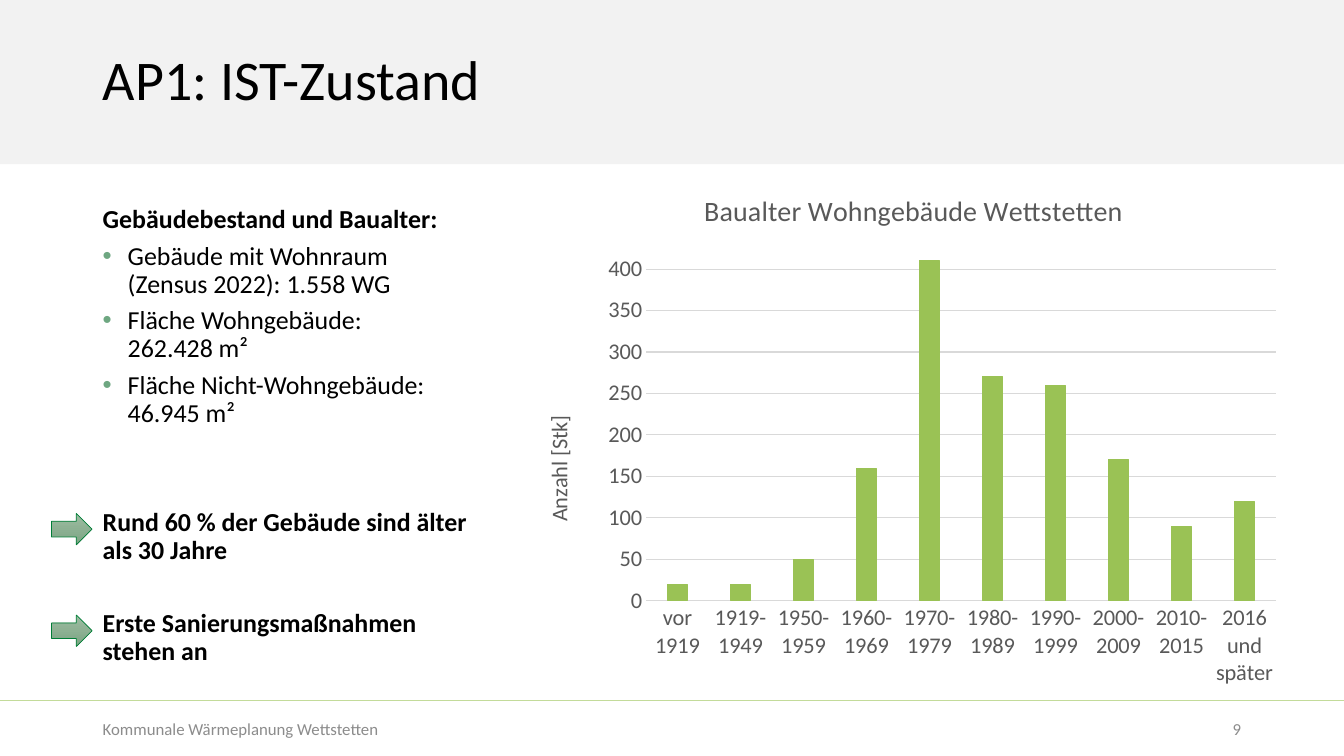
from pptx import Presentation
from pptx.chart.data import CategoryChartData
from pptx.dml.color import RGBColor
from pptx.enum.chart import XL_CHART_TYPE, XL_TICK_MARK
from pptx.enum.shapes import MSO_CONNECTOR, MSO_SHAPE
from pptx.enum.text import MSO_ANCHOR, PP_ALIGN
from pptx.oxml import parse_xml
from pptx.oxml.ns import nsdecls, qn
from pptx.util import Cm, Pt

COLUMNS = XL_CHART_TYPE.COLUMN_CLUSTERED
NO_TICK = XL_TICK_MARK.NONE
STRAIGHT = MSO_CONNECTOR.STRAIGHT
RECTANGLE, RIGHT_ARROW = MSO_SHAPE.RECTANGLE, MSO_SHAPE.RIGHT_ARROW
TOP, MIDDLE = MSO_ANCHOR.TOP, MSO_ANCHOR.MIDDLE
LEFT, RIGHT = PP_ALIGN.LEFT, PP_ALIGN.RIGHT

FONT = "Calibri"
COLORS = {
    "text": "000000", "band": "F2F2F2", "rule": "C3DB9A", "footer": "8C8C8C",
    "bullet": "6EA781", "arrow_light": "9DBCA2", "arrow_dark": "7CA583",
    "arrow_edge": "007E37", "column": "9AC255", "grid": "D9D9D9", "axis": "595959",
}
WIDTH, HEIGHT = 33.87, 19.05
MARGIN = 2.34

FACTS = [
    ("Gebäude mit Wohnraum", "(Zensus 2022): 1.558 WG"),
    ("Fläche Wohngebäude:", "262.428 m²"),
    ("Fläche Nicht-Wohngebäude:", "46.945 m²"),
]
CONCLUSIONS = [
    "Rund 60 % der Gebäude sind älter als 30 Jahre",
    "Erste Sanierungsmaßnahmen stehen an",
]
BUILDINGS = {
    "vor 1919": 20, "1919-1949": 20, "1950-1959": 50, "1960-1969": 160,
    "1970-1979": 410, "1980-1989": 270, "1990-1999": 260, "2000-2009": 170,
    "2010-2015": 90, "2016 und später": 120,
}


def color(name):
    """Return the named colour."""
    return RGBColor.from_string(COLORS[name])


def style(font, size, name="text", bold=False):
    """Give a font its face, size, colour and weight."""
    font.name, font.size, font.bold = FONT, Pt(size), bold
    font.color.rgb = color(name)


def add_run(paragraph, text, size, name="text", bold=False):
    """Append one styled run."""
    run = paragraph.add_run()
    run.text = text
    style(run.font, size, name, bold)


def add_frame(slide, left, top, width, height, anchor=TOP):
    """Add a wrapping text box and return its frame."""
    frame = slide.shapes.add_textbox(Cm(left), Cm(top), Cm(width), Cm(height)).text_frame
    frame.word_wrap = True
    frame.vertical_anchor = anchor
    return frame


def set_body_spacing(paragraph):
    """Apply the spacing of the body text."""
    paragraph.line_spacing = 0.9
    paragraph.space_after = Pt(6)


def add_bullet(paragraph):
    """Give a paragraph a green bullet and a hanging indent."""
    properties = paragraph._p.get_or_add_pPr()
    properties.set("marL", str(Cm(0.63)))
    properties.set("indent", str(-Cm(0.63)))
    for xml in (
        f'<a:buClr {nsdecls("a")}><a:srgbClr val="{COLORS["bullet"]}"/></a:buClr>',
        f'<a:buFont {nsdecls("a")} typeface="Arial"/>',
        f'<a:buChar {nsdecls("a")} char="•"/>',
    ):
        properties.append(parse_xml(xml))


def add_header(slide, width, height):
    """Place the grey band and the slide title on it."""
    band = slide.shapes.add_shape(RECTANGLE, 0, 0, Cm(width), Cm(height))
    band.shadow.inherit = False
    band.fill.solid()
    band.fill.fore_color.rgb = color("band")
    band.line.fill.background()
    slide.shapes._spTree.insert(2, band._element)

    title = slide.shapes.title
    title.left, title.top = Cm(MARGIN), Cm(0.23)
    title.width, title.height = Cm(width - 2 * MARGIN), Cm(height - 0.46)
    title.text_frame.vertical_anchor = MIDDLE
    heading = title.text_frame.paragraphs[0]
    heading.alignment = LEFT
    heading.line_spacing = 0.9
    add_run(heading, "AP1: IST-Zustand", 40)


def add_facts(slide, left, top, width, height):
    """Place the heading and the bulleted building figures."""
    frame = add_frame(slide, left, top, width, height)
    heading = frame.paragraphs[0]
    set_body_spacing(heading)
    add_run(heading, "Gebäudebestand und Baualter:", 18.5, bold=True)
    for label, figure in FACTS:
        fact = frame.add_paragraph()
        add_bullet(fact)
        set_body_spacing(fact)
        add_run(fact, label, 18.5)
        fact.add_line_break()
        add_run(fact, figure, 18.5)


def add_conclusion(slide, text, left, top, width, height):
    """Place a bold conclusion with an arrow to its left."""
    statement = add_frame(slide, left, top, width, height).paragraphs[0]
    set_body_spacing(statement)
    add_run(statement, text, 18.5, bold=True)

    arrow = slide.shapes.add_shape(
        RIGHT_ARROW, Cm(left - 1.04), Cm(top + 0.24), Cm(1.02), Cm(0.79))
    arrow.shadow.inherit = False
    arrow.fill.gradient()
    arrow.fill.gradient_angle = 270
    for stop, name in zip(arrow.fill.gradient_stops, ("arrow_light", "arrow_dark")):
        stop.color.rgb = color(name)
    arrow.line.color.rgb = color("arrow_edge")
    arrow.line.width = Pt(0.5)


def set_layout(parent, index, target="", **fractions):
    """Fix a chart part at fractions of the chart area."""
    for old in parent.findall(qn("c:layout")):
        parent.remove(old)
    modes = '<c:xMode val="edge"/><c:yMode val="edge"/>'
    values = "".join(f'<c:{key} val="{value}"/>' for key, value in fractions.items())
    parent.insert(index, parse_xml(
        f'<c:layout {nsdecls("c")}><c:manualLayout>{target}{modes}{values}'
        '</c:manualLayout></c:layout>'))


def add_chart_title(owner, text, size, x, y):
    """Title a chart or an axis at a fixed place."""
    owner.has_title = True
    title = owner.chart_title if hasattr(owner, "chart_title") else owner.axis_title
    add_run(title.text_frame.paragraphs[0], text, size, "axis")
    set_layout(title._element, 1, x=x, y=y)


def add_age_chart(slide, left, top, width, height):
    """Place the column chart of building ages."""
    data = CategoryChartData()
    data.categories = list(BUILDINGS)
    data.add_series("Anzahl", list(BUILDINGS.values()))
    chart = slide.shapes.add_chart(
        COLUMNS, Cm(left), Cm(top), Cm(width), Cm(height), data).chart
    style(chart.font, 10)
    chart.has_legend = False
    add_chart_title(chart, "Baualter Wohngebäude Wettstetten", 20, 0.22, 0.03)

    ages, counts = chart.category_axis, chart.value_axis
    for axis in (ages, counts):
        axis.major_tick_mark = axis.minor_tick_mark = NO_TICK
        style(axis.tick_labels.font, 16, "axis")
    counts.minimum_scale, counts.maximum_scale, counts.major_unit = 0, 425, 50
    counts.format.line.fill.background()
    for line in (ages.format.line, counts.major_gridlines.format.line):
        line.color.rgb = color("grid")
        line.width = Pt(0.75)
    add_chart_title(counts, "Anzahl [Stk]", 16, 0.01, 0.46)

    plot = chart.plots[0]
    plot.gap_width, plot.overlap, plot.vary_by_categories = 219, -27, False
    columns = plot.series[0].format
    columns.fill.solid()
    columns.fill.fore_color.rgb = color("column")
    columns.line.color.rgb = color("column")
    columns.line.width = Pt(0.75)
    set_layout(chart._chartSpace.chart.plotArea, 0, '<c:layoutTarget val="inner"/>',
               x=0.15, y=0.15, w=0.83, h=0.67)


def add_footer(slide, top, width):
    """Place the rule, the footer text and the page number."""
    rule = slide.shapes.add_connector(STRAIGHT, 0, Cm(top), Cm(width), Cm(top))
    rule.line.color.rgb = color("rule")
    rule.line.width = Pt(0.5)
    rule._element.spPr.append(parse_xml(f'<a:effectLst {nsdecls("a")}/>'))
    for text, left, span, alignment in (
        ("Kommunale Wärmeplanung Wettstetten", MARGIN, 20.32, LEFT),
        ("9", width - MARGIN - 2.3, 2.3, RIGHT),
    ):
        entry = add_frame(slide, left, top + 0.2, span, 1.02, MIDDLE).paragraphs[0]
        entry.alignment = alignment
        add_run(entry, text, 12, "footer")


def main():
    """Build and save the slide."""
    deck = Presentation()
    deck.slide_width, deck.slide_height = Cm(WIDTH), Cm(HEIGHT)
    slide = deck.slides.add_slide(deck.slide_layouts[5])
    add_header(slide, WIDTH, 4.14)
    add_facts(slide, MARGIN, 5.08, 10.36, 6.2)
    for row, text in enumerate(CONCLUSIONS):
        add_conclusion(slide, text, MARGIN, 12.7 + 2.56 * row, 10.36, 1.9)
    add_age_chart(slide, 13.41, 4.27, 19.13, 13.26)
    add_footer(slide, 17.65, WIDTH)
    deck.save("out.pptx")


if __name__ == "__main__":
    main()
